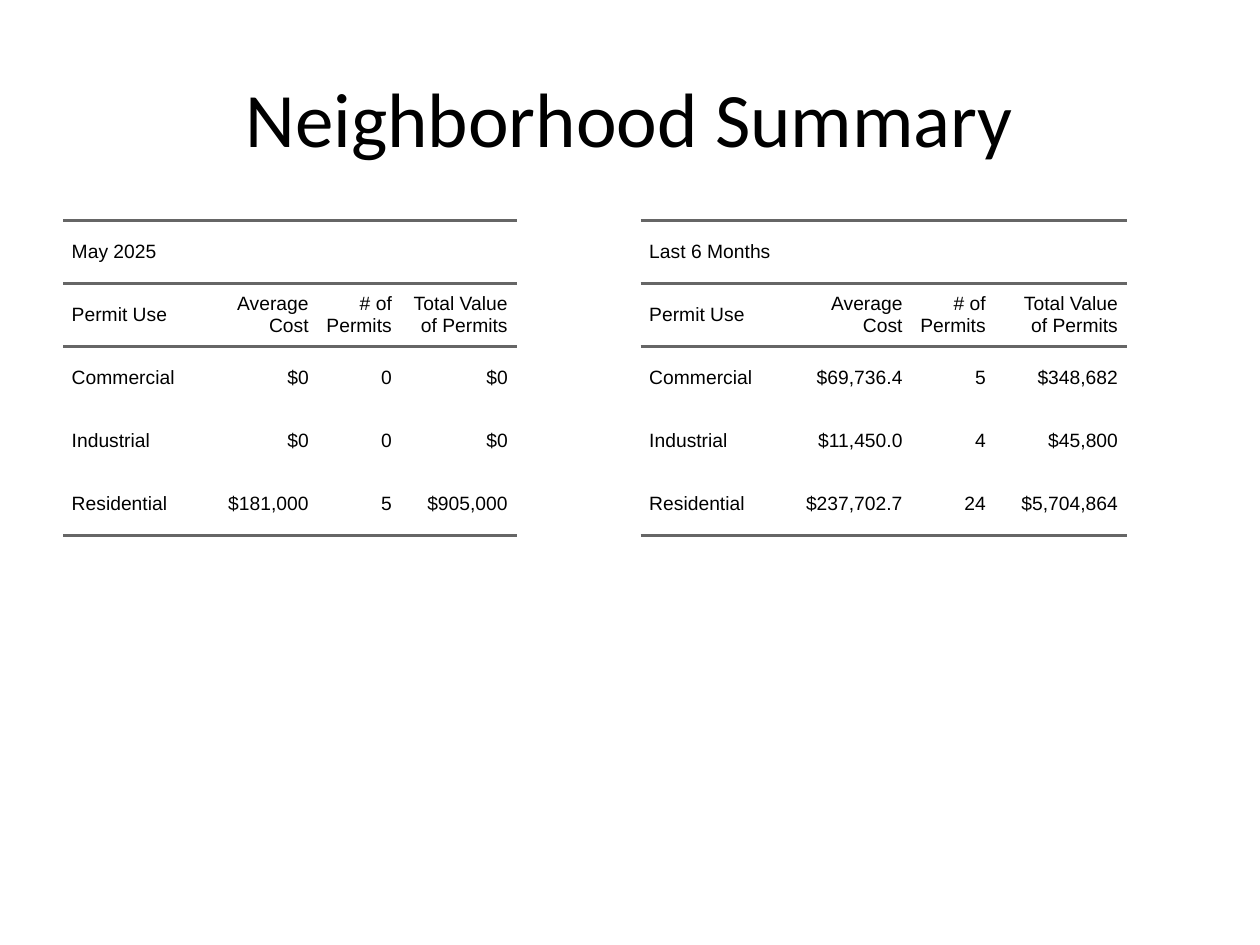
from dataclasses import dataclass

from lxml import etree
from pptx import Presentation
from pptx.dml.color import RGBColor
from pptx.enum.text import MSO_ANCHOR, PP_ALIGN
from pptx.oxml.ns import qn
from pptx.slide import Slide
from pptx.table import Table, _Cell
from pptx.text.text import _Paragraph
from pptx.util import Pt

MIDDLE = MSO_ANCHOR.MIDDLE
LEFT, CENTER, RIGHT = PP_ALIGN.LEFT, PP_ALIGN.CENTER, PP_ALIGN.RIGHT
BLANK_LAYOUT = 6
NO_STYLE_NO_GRID = "{2D5ABB26-0587-4C30-8999-92F81FD0307C}"
TABLE_TOP = 126
ROW_HEIGHT = 36
CELL_PADDING = 5
HEADINGS = ("Permit Use", "Average Cost", "# of Permits", "Total Value of Permits")


@dataclass(frozen=True)
class Theme:
    text: str = "000000"
    rule: str = "666666"
    rule_width: float = 1.5
    title_font: str = "Calibri"
    title_size: float = 44
    table_font: str = "Arial"
    table_size: float = 11


@dataclass(frozen=True)
class PermitTable:
    period: str
    left: float
    column_widths: tuple[float, ...]
    rows: tuple[tuple[str, ...], ...]


THEME = Theme()
PERMIT_TABLES = (
    PermitTable("May 2025", 36, (79.2, 66.24, 47.52, 66.24), (
        ("Commercial", "$0", "0", "$0"),
        ("Industrial", "$0", "0", "$0"),
        ("Residential", "$181,000", "5", "$905,000"),
    )),
    PermitTable("Last 6 Months", 366, (79.2, 75.6, 47.52, 75.6), (
        ("Commercial", "$69,736.4", "5", "$348,682"),
        ("Industrial", "$11,450.0", "4", "$45,800"),
        ("Residential", "$237,702.7", "24", "$5,704,864"),
    )),
)


def add_run(paragraph: _Paragraph, text: str, font: str, size: float) -> None:
    run = paragraph.add_run()
    run.text = text
    run.font.name = font
    run.font.size = Pt(size)
    run.font.color.rgb = RGBColor.from_string(THEME.text)


def add_title(slide: Slide, text: str) -> None:
    shape = slide.shapes.add_textbox(Pt(36), Pt(21.6), Pt(648), Pt(90))
    frame = shape.text_frame
    frame.word_wrap = True
    frame.vertical_anchor = MIDDLE
    paragraph = frame.paragraphs[0]
    paragraph.alignment = CENTER
    add_run(paragraph, text, THEME.title_font, THEME.title_size)


def add_rules(cell: _Cell, sides: tuple[str, ...]) -> None:
    """Draw horizontal rules; border elements must come before the cell fill."""
    properties = cell._tc.get_or_add_tcPr()
    for position, side in enumerate(sides):
        line = etree.Element(qn(f"a:{side}"), w=str(Pt(THEME.rule_width)))
        fill = etree.SubElement(line, qn("a:solidFill"))
        etree.SubElement(fill, qn("a:srgbClr"), val=THEME.rule)
        properties.insert(position, line)


def write_cell(cell: _Cell, text: str, alignment: PP_ALIGN) -> None:
    cell.vertical_anchor = MIDDLE
    cell.margin_left = cell.margin_right = Pt(CELL_PADDING)
    cell.margin_top = cell.margin_bottom = 0
    paragraph = cell.text_frame.paragraphs[0]
    paragraph.alignment = alignment
    paragraph.space_before = paragraph.space_after = Pt(5)
    add_run(paragraph, text, THEME.table_font, THEME.table_size)


def clear_style(table: Table) -> None:
    table.first_row = table.horz_banding = False
    table._tbl.tblPr.find(qn("a:tableStyleId")).text = NO_STYLE_NO_GRID


def add_permit_table(slide: Slide, permits: PermitTable) -> None:
    content = ((permits.period,), HEADINGS, *permits.rows)
    row_count, column_count = len(content), len(HEADINGS)
    table = slide.shapes.add_table(
        row_count, column_count, Pt(permits.left), Pt(TABLE_TOP),
        Pt(sum(permits.column_widths)), Pt(ROW_HEIGHT * row_count),
    ).table
    clear_style(table)
    for column, width in zip(table.columns, permits.column_widths):
        column.width = Pt(width)
    table.cell(0, 0).merge(table.cell(0, column_count - 1))

    for row_index, texts in enumerate(content):
        table.rows[row_index].height = Pt(ROW_HEIGHT)
        for column_index in range(column_count):
            cell = table.cell(row_index, column_index)
            cell.fill.background()
            if row_index < 2:
                add_rules(cell, ("lnT", "lnB"))
            elif row_index == row_count - 1:
                add_rules(cell, ("lnB",))
            if column_index < len(texts):
                alignment = RIGHT if column_index else LEFT
                write_cell(cell, texts[column_index], alignment)


def main() -> None:
    presentation = Presentation()
    presentation.slide_width, presentation.slide_height = Pt(720), Pt(540)
    slide = presentation.slides.add_slide(presentation.slide_layouts[BLANK_LAYOUT])
    for permits in PERMIT_TABLES:
        add_permit_table(slide, permits)
    add_title(slide, "Neighborhood Summary")
    presentation.save("out.pptx")


if __name__ == "__main__":
    main()
